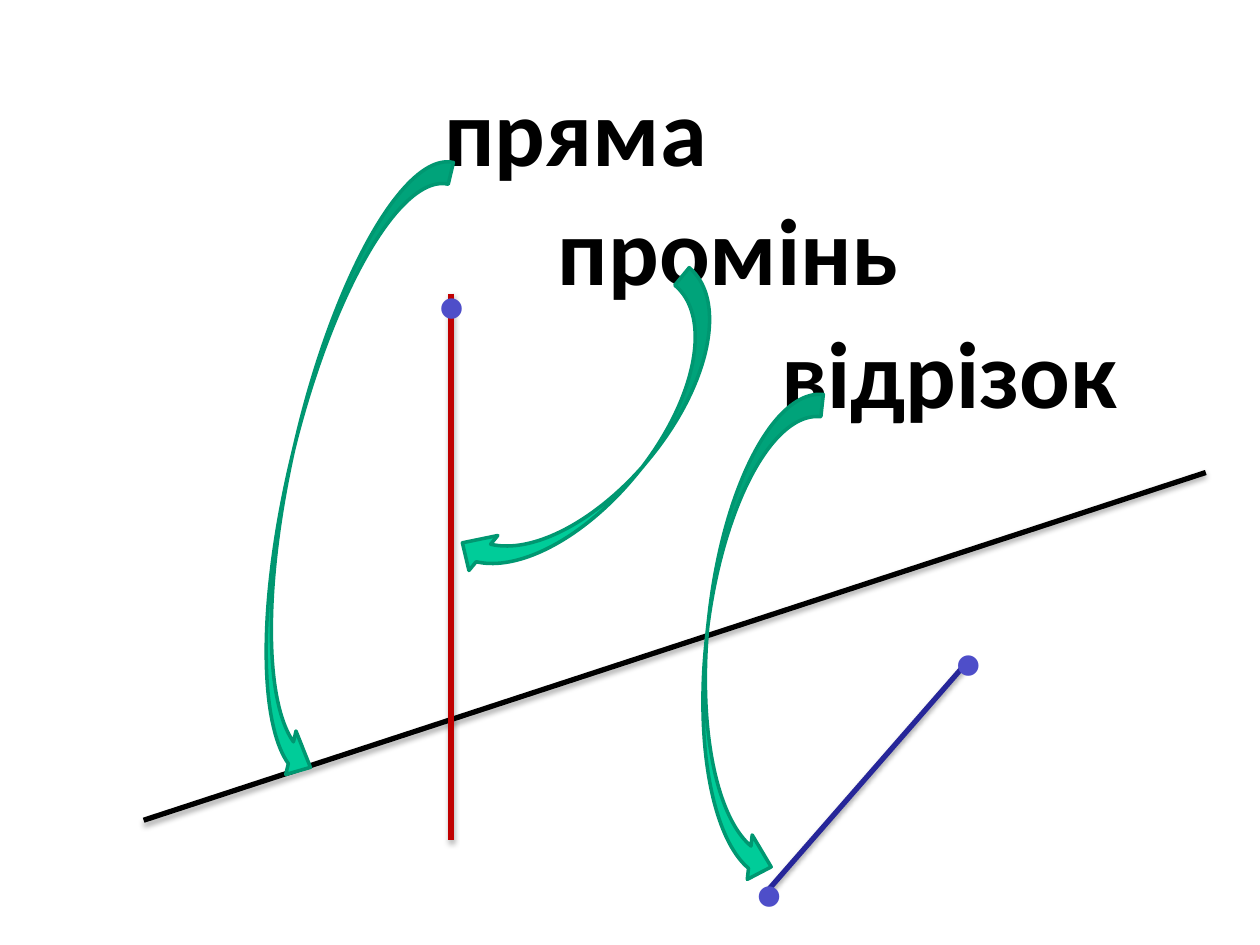
from lxml import etree
from pptx import Presentation
from pptx.dml.color import RGBColor
from pptx.enum.shapes import MSO_CONNECTOR, MSO_SHAPE
from pptx.enum.text import MSO_AUTO_SIZE, PP_ALIGN
from pptx.oxml import parse_xml
from pptx.oxml.ns import nsdecls, qn
from pptx.util import Inches, Pt

STRAIGHT = MSO_CONNECTOR.STRAIGHT
BENDS_LEFT = MSO_SHAPE.CURVED_RIGHT_ARROW
BENDS_RIGHT = MSO_SHAPE.CURVED_LEFT_ARROW
CENTER = PP_ALIGN.CENTER
NO_AUTOFIT, FIT_SHAPE = MSO_AUTO_SIZE.NONE, MSO_AUTO_SIZE.SHAPE_TO_FIT_TEXT

THEME = {
    "term": ("Calibri", 54, "000000"),
    "point": ("Times New Roman", 72, "4E4EC9"),
    "line": "000000",
    "ray": "C00000",
    "segment": "262699",
    "pointer": "00CC99",
    "pointer_edge": "009771",
    "figure_width": 3,
    "edge_width": 2,
}

TERMS = [
    ("пряма", 3.43, 0.52, 2.63),
    ("відрізок", 6.1, 2.44, 3.62),
    ("промінь", 4.33, 1.47, 3.35),
]
FIGURES = [
    ("line", (1.14, 6.51), (9.57, 3.75)),
    ("ray", (3.58, 2.33), (3.58, 6.67)),
    ("segment", (6.1, 7.06), (7.68, 5.25)),
]
POINTS = [(3.58, 2.44), (6.1, 7.11), (7.68, 5.27)]
POINTERS = [
    (BENDS_LEFT, (2.31, 1.14, 0.71, 5.11), 13.3),
    (BENDS_RIGHT, (4.43, 2.01, 0.72, 3.01), 39.5),
    (BENDS_LEFT, (5.61, 3.08, 0.71, 3.95), 6.3),
]
TERM_HEIGHT = 1
POINT_BOX = (0.45, 1.31)
POINT_OFFSET = (0.22, 0.97)

SHADOW = (
    f'<a:effectLst {nsdecls("a")}><a:outerShdw blurRad="{Pt(3.1)}" dist="{Pt(1.8)}" '
    'dir="5400000" rotWithShape="0"><a:srgbClr val="000000"><a:alpha val="35000"/>'
    "</a:srgbClr></a:outerShdw></a:effectLst>"
)


def color(value):
    """Turn a hex value into a colour."""
    return RGBColor.from_string(value)


def add_label(slide, text, box, style, wrap, fit):
    """Add one bold text box and return its paragraph."""
    name, size, tint = THEME[style]
    frame = slide.shapes.add_textbox(*map(Inches, box)).text_frame
    frame.word_wrap = wrap
    frame.auto_size = fit
    frame.text = text
    paragraph = frame.paragraphs[0]
    font = paragraph.runs[0].font
    font.name, font.size, font.bold = name, Pt(size), True
    font.color.rgb = color(tint)
    return paragraph


def add_figure(slide, kind, start, end):
    """Draw a geometric figure as a straight shadowed line."""
    figure = slide.shapes.add_connector(STRAIGHT, *map(Inches, start + end))
    figure.line.color.rgb = color(THEME[kind])
    figure.line.width = Pt(THEME["figure_width"])
    properties = figure._element.find(qn("p:spPr"))
    properties.append(parse_xml(etree.tostring(etree.fromstring(SHADOW))))


def add_pointer(slide, bend, box, turn):
    """Draw a curved arrow from a term to its figure."""
    pointer = slide.shapes.add_shape(bend, *map(Inches, box))
    pointer.rotation = turn
    pointer.shadow.inherit = False
    pointer.fill.solid()
    pointer.fill.fore_color.rgb = color(THEME["pointer"])
    pointer.line.color.rgb = color(THEME["pointer_edge"])
    pointer.line.width = Pt(THEME["edge_width"])


def main():
    """Build the slide of basic geometric figures."""
    deck = Presentation()
    deck.slide_width, deck.slide_height = Inches(10), Inches(7.5)
    slide = deck.slides.add_slide(deck.slide_layouts[6])
    for term, left, top, width in TERMS:
        add_label(slide, term, (left, top, width, TERM_HEIGHT), "term", True, NO_AUTOFIT)
    for figure in FIGURES:
        add_figure(slide, *figure)
    for x, y in POINTS:
        box = (x - POINT_OFFSET[0], y - POINT_OFFSET[1], *POINT_BOX)
        add_label(slide, ".", box, "point", False, FIT_SHAPE).alignment = CENTER
    for pointer in POINTERS:
        add_pointer(slide, *pointer)
    deck.save("out.pptx")


if __name__ == "__main__":
    main()
